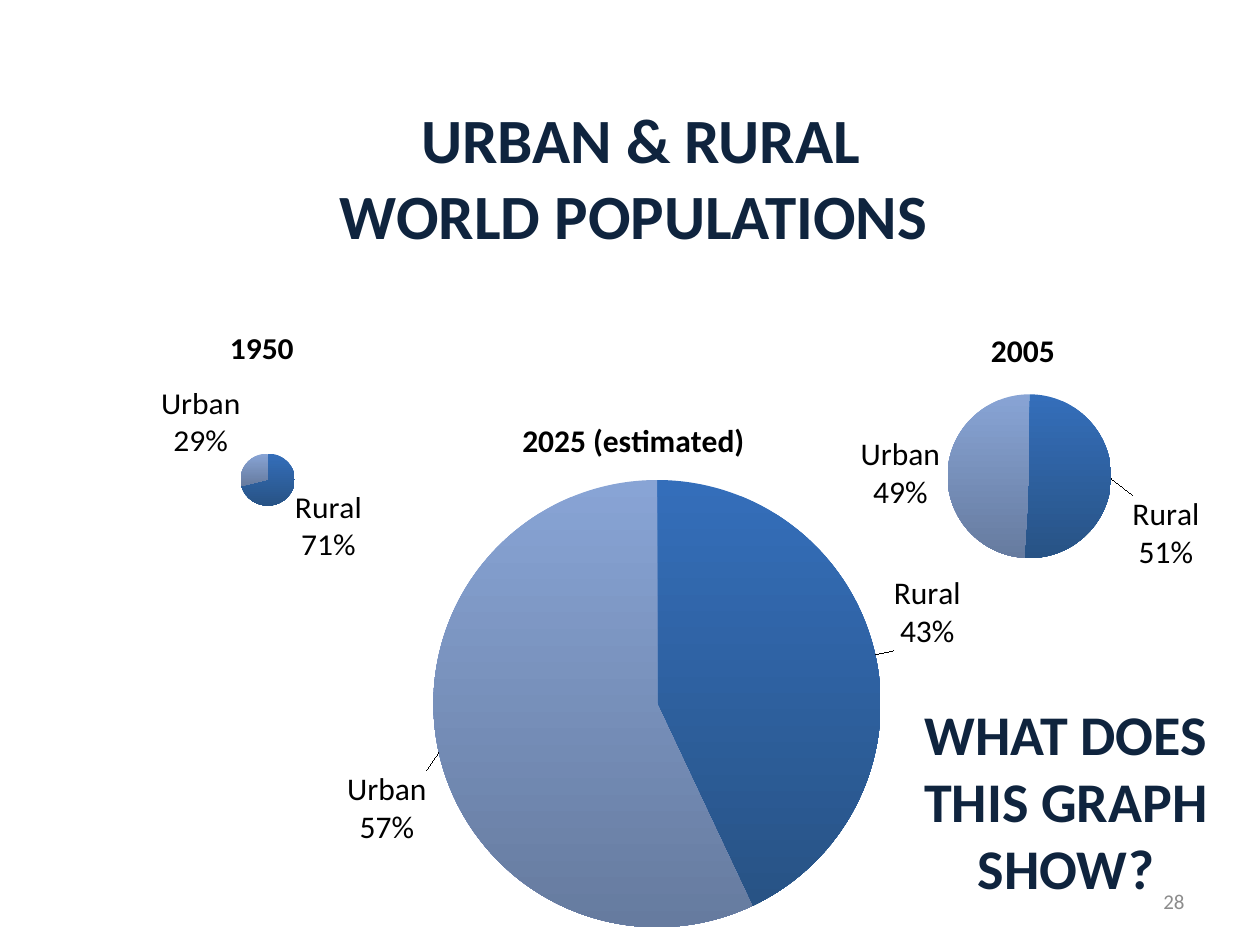
import pptx
import pptx.chart.data
import pptx.dml.color
import pptx.enum.chart
import pptx.enum.text
import pptx.oxml
import pptx.oxml.ns
import pptx.util
from dataclasses import dataclass, field

Inches = pptx.util.Inches
RGBColor = pptx.dml.color.RGBColor
Align = pptx.enum.text.PP_ALIGN
Anchor = pptx.enum.text.MSO_ANCHOR
qn = pptx.oxml.ns.qn

FONT = "Calibri"
NAVY = RGBColor(0x0F, 0x24, 0x3E)
GREY = RGBColor(0x8C, 0x8C, 0x8C)
BLACK = RGBColor(0, 0, 0)
# Top and bottom colour of each slice
SHADES = [
    (RGBColor(0x34, 0x6E, 0xBA), RGBColor(0x28, 0x53, 0x85)),
    (RGBColor(0x88, 0xA4, 0xD5), RGBColor(0x66, 0x7B, 0x9F)),
]


@dataclass
class Pie:
    """One pie; all lengths in inches, places measured on the slide."""
    title: str
    name: str
    values: tuple[int, int]
    box: tuple[float, float, float, float]
    disc: tuple[float, float, float]  # left, top, width
    head: tuple[float, float]
    shifts: dict[int, tuple[float, float]] = field(default_factory=dict)


PIES = [
    Pie("1950", "1950", (71, 29), (0, 2.33, 4.17, 2.22),
        (1.91, 3.65, 0.43), (1.78, 2.56)),
    Pie("2005", "2005", (51, 49), (6.25, 2.33, 3.75, 2.25),
        (7.52, 3.13, 1.3), (7.82, 2.56), {0: (0.11, 0.43)}),
    Pie("2025 (estimated)", "Series 1", (43, 57), (1.83, 3.06, 6.67, 4.44),
        (3.44, 3.81, 3.55), (4.1, 3.28),
        {0: (0.09, -0.02), 1: (-0.04, 0.13)}),
]


def style(font, size: float, color: RGBColor, bold: bool = False) -> None:
    font.name, font.size, font.bold = FONT, pptx.util.Pt(size), bold
    font.color.rgb = color


def write(frame, text: str, *, size: float, color: RGBColor = NAVY,
          bold: bool = True, align=Align.CENTER, anchor=Anchor.TOP) -> None:
    frame.word_wrap = True
    frame.auto_size = pptx.enum.text.MSO_AUTO_SIZE.NONE
    frame.vertical_anchor = anchor
    para = frame.paragraphs[0]
    para.alignment = align
    run = para.add_run()
    run.text = text
    style(run.font, size, color, bold)


def node(tag: str, inner: str):
    space = pptx.oxml.ns.nsdecls("c")
    return pptx.oxml.parse_xml(f"<c:{tag} {space}>{inner}</c:{tag}>")


def layout(target: str = "", **parts: float):
    """Manual layout; parts are shares of the chart's size."""
    inner = f'<c:layoutTarget val="{target}"/>' if target else ""
    if target or "edge" in parts:
        inner += '<c:xMode val="edge"/><c:yMode val="edge"/>'
    inner += "".join(f'<c:{key} val="{parts[key]:.4f}"/>'
                     for key in ("x", "y", "w", "h") if key in parts)
    return node("layout", f"<c:manualLayout>{inner}</c:manualLayout>")


def place(owner, item, index: int) -> None:
    for old in owner.findall(qn("c:layout")):
        owner.remove(old)
    owner.insert(index, item)


def label(series, pie: Pie) -> None:
    """Name and share on two lines, with some labels moved away."""
    wide, high = pie.box[2:]
    tags = series.data_labels
    tags.show_value = False
    tags.show_category_name = tags.show_percentage = True
    tags.number_format, tags.number_format_is_linked = "0%", False
    tags.position = pptx.enum.chart.XL_LABEL_POSITION.OUTSIDE_END
    style(tags.font, 18, BLACK)
    root = series._element.find(qn("c:dLbls"))
    root.find(qn("c:showPercent")).getnext().addnext(node("separator", "\n"))
    flags = "".join(
        f'<c:show{key} val="{int(key in ("CatName", "Percent"))}"/>'
        for key in ("LegendKey", "Val", "CatName", "SerName", "Percent",
                    "BubbleSize"))
    for spot, (index, (right, down)) in enumerate(pie.shifts.items()):
        tag = node("dLbl", f'<c:idx val="{index}"/><c:dLblPos val="outEnd"/>'
                   f"{flags}<c:separator>\n</c:separator>")
        tag.insert(1, layout(x=right / wide, y=down / high))
        root.insert(spot, tag)


def draw(slide, pie: Pie) -> None:
    left, top, wide, high = pie.box
    data = pptx.chart.data.CategoryChartData()
    data.categories = ["Rural", "Urban"]
    data.add_series(pie.name, pie.values)
    chart = slide.shapes.add_chart(
        pptx.enum.chart.XL_CHART_TYPE.PIE, *map(Inches, pie.box), data).chart
    chart.has_legend = False
    style(chart.font, 18, BLACK)

    # Heading
    chart.has_title = True
    write(chart.chart_title.text_frame, pie.title, size=18, color=BLACK)
    place(chart.chart_title._element,
          layout(edge=1, x=(pie.head[0] - left) / wide,
                 y=(pie.head[1] - top) / high), 1)

    # Disc
    across, down, size = pie.disc
    place(chart._chartSpace.chart.plotArea,
          layout("inner", x=(across - left) / wide, y=(down - top) / high,
                 w=size / wide, h=size / high), 0)
    series = chart.plots[0].series[0]
    for index, shades in enumerate(SHADES):
        fill = series.points[index].format.fill
        fill.gradient()
        fill.gradient_angle = 270
        for stop, shade in zip(fill.gradient_stops, shades):
            stop.color.rgb = shade
    label(series, pie)


def main() -> None:
    deck = pptx.Presentation()
    deck.slide_width, deck.slide_height = Inches(10), Inches(7.5)
    slide = deck.slides.add_slide(deck.slide_layouts[5])

    # Slide number
    box = slide.shapes.add_textbox(*map(Inches, (7.17, 6.95, 2.33, 0.4)))
    write(box.text_frame, "28", size=12, color=GREY, bold=False,
          align=Align.RIGHT, anchor=Anchor.MIDDLE)

    # Charts
    for pie in PIES:
        draw(slide, pie)

    # Title
    title = slide.shapes.title
    title.left, title.top, title.width, title.height = map(
        Inches, (2.42, 0.75, 5.33, 1.31))
    write(title.text_frame, "URBAN & RURAL WORLD POPULATIONS ", size=36)

    # Question
    box = slide.shapes.add_textbox(*map(Inches, (6.92, 5.5, 3.08, 1.72)))
    write(box.text_frame, "WHAT DOES THIS GRAPH SHOW?", size=32)

    deck.save("out.pptx")


if __name__ == "__main__":
    main()
